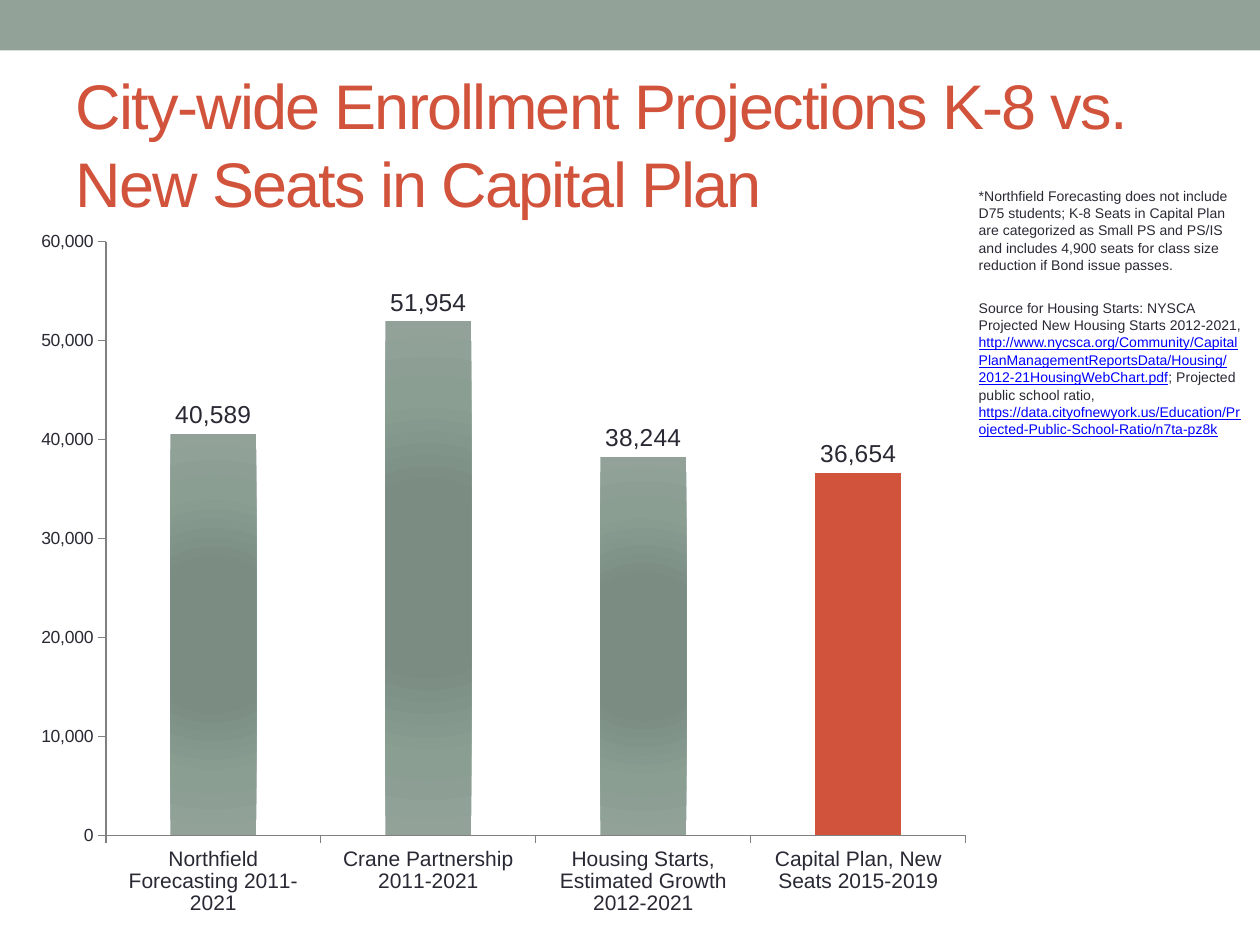
from dataclasses import dataclass

from lxml.etree import SubElement
from pptx import Presentation
from pptx.chart.data import CategoryChartData
from pptx.dml.color import RGBColor
from pptx.enum.chart import XL_CHART_TYPE, XL_LABEL_POSITION, XL_TICK_MARK
from pptx.enum.shapes import MSO_SHAPE
from pptx.enum.text import MSO_ANCHOR
from pptx.oxml import parse_xml
from pptx.oxml.ns import nsdecls, qn
from pptx.util import Pt


@dataclass(frozen=True)
class Theme:
    """Colours, font and type sizes of the slide."""

    font: str = "Arial"
    sage: str = "93A299"
    accent: str = "D2533C"
    ink: str = "292934"
    link: str = "0000FF"
    axis: str = "808080"
    gradient: tuple = ((0, "7B8E82"), (34, "7B8D83"), (70, "8A9E92"), (100, "93A299"))
    title_size: int = 36
    label_size: int = 14
    category_size: int = 12
    axis_size: int = 10
    note_size: int = 8
    line_spacing: float = 1.04


@dataclass(frozen=True)
class Box:
    """Position and size in points."""

    left: float
    top: float
    width: float
    height: float

    def lengths(self) -> tuple:
        """Return the four lengths."""
        return Pt(self.left), Pt(self.top), Pt(self.width), Pt(self.height)


@dataclass(frozen=True)
class Note:
    """A side note made of (text, is_address) pieces."""

    box: Box
    pieces: tuple


@dataclass(frozen=True)
class Bar:
    """One category and its value."""

    category: str
    seats: int


THEME = Theme()
TITLE = "City-wide Enrollment Projections K-8 vs. New Seats in Capital Plan"
BARS = (
    Bar("Northfield Forecasting 2011-2021", 40589),
    Bar("Crane Partnership 2011-2021", 51954),
    Bar("Housing Starts, Estimated Growth 2012-2021", 38244),
    Bar("Capital Plan, New Seats 2015-2019", 36654),
)
NOTES = (
    Note(Box(552.2, 103, 167.8, 55.4), (
        ("*Northfield Forecasting does not include D75 students; K-8 Seats in Capital Plan "
         "are categorized as Small PS and PS/IS and includes 4,900 seats for class size "
         "reduction if Bond issue passes.", False),
    )),
    Note(Box(552.2, 167, 167.8, 94.3), (
        ("Source for Housing Starts: NYSCA Projected New Housing Starts 2012-2021, ", False),
        ("http://www.nycsca.org/Community/CapitalPlanManagementReportsData/Housing/"
         "2012-21HousingWebChart.pdf", True),
        ("; Projected public school ratio, ", False),
        ("https://data.cityofnewyork.us/Education/Projected-Public-School-Ratio/n7ta-pz8k", True),
    )),
)


def style_font(font, size: float, color: str) -> None:
    """Apply the theme font at a size and colour."""
    font.name = THEME.font
    font.size = Pt(size)
    font.color.rgb = RGBColor.from_string(color)


def add_band(slide, box: Box) -> None:
    """Draw the band along the top edge."""
    band = slide.shapes.add_shape(MSO_SHAPE.RECTANGLE, *box.lengths())
    band.shadow.inherit = False
    band.fill.solid()
    band.fill.fore_color.rgb = RGBColor.from_string(THEME.sage)
    band.line.fill.background()


def set_title(slide, box: Box) -> None:
    """Fill and place the title placeholder."""
    title = slide.shapes.title
    title.left, title.top, title.width, title.height = box.lengths()
    title.text_frame.text = TITLE
    title.text_frame.vertical_anchor = MSO_ANCHOR.MIDDLE
    paragraph = title.text_frame.paragraphs[0]
    paragraph.line_spacing = THEME.line_spacing
    run = paragraph.runs[0]
    style_font(run.font, THEME.title_size, THEME.accent)
    run.font._element.set("spc", "-100")
    paragraph._p.get_or_add_pPr().set("algn", "l")


def add_note(slide, note: Note) -> None:
    """Draw a side note with underlined addresses."""
    frame = slide.shapes.add_textbox(*note.box.lengths()).text_frame
    frame.word_wrap = True
    paragraph = frame.paragraphs[0]
    paragraph.line_spacing = THEME.line_spacing
    for text, is_address in note.pieces:
        run = paragraph.add_run()
        run.text = text
        style_font(run.font, THEME.note_size, THEME.link if is_address else THEME.ink)
        run.font.underline = is_address


def fill_radial(series) -> None:
    """Give the series a circular gradient fill."""
    series.format.fill.solid()
    properties = series._element.find(qn("c:spPr"))
    stops = "".join(
        f'<a:gs pos="{position * 1000}"><a:srgbClr val="{color}"/></a:gs>'
        for position, color in THEME.gradient
    )
    gradient = parse_xml(
        f'<a:gradFill {nsdecls("a")} rotWithShape="1"><a:gsLst>{stops}</a:gsLst>'
        '<a:path path="circle"><a:fillToRect l="50000" t="50000" r="50000" b="50000"/>'
        "</a:path></a:gradFill>"
    )
    properties.replace(properties.find(qn("a:solidFill")), gradient)


def place_plot(chart, left: float, top: float, width: float, height: float) -> None:
    """Fix the inner plot area as fractions of the chart."""
    plot_area = chart._chartSpace.chart.plotArea
    layout = plot_area.find(qn("c:layout"))
    if layout is None:
        layout = parse_xml(f'<c:layout {nsdecls("c")}/>')
        plot_area.insert(0, layout)
    manual = SubElement(layout, qn("c:manualLayout"))
    settings = {"layoutTarget": "inner", "xMode": "edge", "yMode": "edge",
                "x": left, "y": top, "w": width, "h": height}
    for name, value in settings.items():
        SubElement(manual, qn(f"c:{name}")).set("val", str(value))


def style_axis(axis, size: float) -> None:
    """Format an axis with outside ticks and no gridlines."""
    axis.has_major_gridlines = False
    axis.major_tick_mark = XL_TICK_MARK.OUTSIDE
    axis.minor_tick_mark = XL_TICK_MARK.NONE
    axis.format.line.color.rgb = RGBColor.from_string(THEME.axis)
    axis.format.line.width = Pt(0.75)
    style_font(axis.tick_labels.font, size, THEME.ink)


def add_seat_chart(slide, box: Box) -> None:
    """Draw the column chart with the last bar accented."""
    data = CategoryChartData(number_format="#,##0")
    data.categories = [bar.category for bar in BARS]
    data.add_series("Series 1", [bar.seats for bar in BARS])
    chart = slide.shapes.add_chart(XL_CHART_TYPE.COLUMN_CLUSTERED, *box.lengths(), data).chart
    chart.has_legend = False
    chart.has_title = False
    style_font(chart.font, THEME.axis_size, THEME.ink)
    place_plot(chart, 0.09, 0.03, 0.89, 0.84)

    style_axis(chart.category_axis, THEME.category_size)
    style_axis(chart.value_axis, THEME.axis_size)
    chart.value_axis.minimum_scale = 0
    chart.value_axis.maximum_scale = 60000
    chart.value_axis.major_unit = 10000
    chart.value_axis.tick_labels.number_format = "#,##0"
    chart.value_axis.tick_labels.number_format_is_linked = False

    plot = chart.plots[0]
    plot.gap_width = 150
    plot.vary_by_categories = False
    plot.has_data_labels = True
    labels = plot.data_labels
    labels.show_value = True
    labels.number_format = "#,##0"
    labels.number_format_is_linked = False
    labels.position = XL_LABEL_POSITION.OUTSIDE_END
    style_font(labels.font, THEME.label_size, THEME.ink)

    series = plot.series[0]
    series.invert_if_negative = False
    fill_radial(series)
    accent = series.points[len(BARS) - 1].format.fill
    accent.solid()
    accent.fore_color.rgb = RGBColor.from_string(THEME.accent)


def main() -> None:
    """Build and save the slide."""
    presentation = Presentation()
    presentation.slide_width, presentation.slide_height = Pt(720), Pt(540)
    slide = presentation.slides.add_slide(presentation.slide_layouts[5])
    add_band(slide, Box(0, 0, 720, 28.8))
    set_title(slide, Box(36, 42, 648, 78))
    add_seat_chart(slide, Box(10.8, 126, 552.2, 404))
    for note in NOTES:
        add_note(slide, note)
    presentation.save("out.pptx")


if __name__ == "__main__":
    main()
